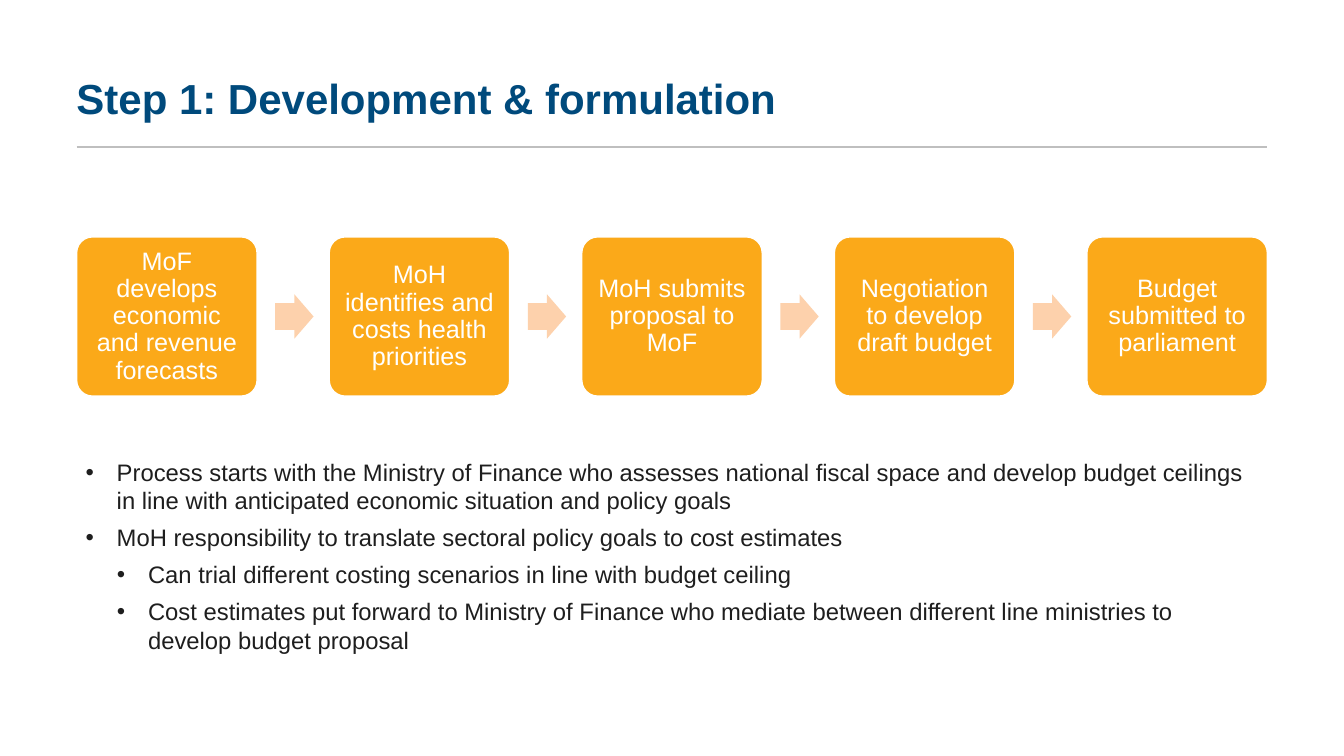
from dataclasses import dataclass

from lxml.etree import SubElement
from pptx import Presentation
from pptx.dml.color import RGBColor
from pptx.enum.shapes import MSO_CONNECTOR as Connector, MSO_SHAPE as Preset
from pptx.enum.text import MSO_ANCHOR as Anchor, PP_ALIGN as Align
from pptx.oxml.ns import qn
from pptx.util import Inches, Pt


@dataclass(frozen=True)
class Theme:
    """Colours, font and type sizes of the slide."""
    font: str = "Arial"
    title: RGBColor = RGBColor(0x00, 0x4A, 0x7C)
    body: RGBColor = RGBColor(0x1E, 0x1E, 0x1E)
    rule: RGBColor = RGBColor(0xBF, 0xBF, 0xBF)
    card: RGBColor = RGBColor(0xFB, 0xA9, 0x19)
    arrow: RGBColor = RGBColor(0xFD, 0xD1, 0xAC)
    white: RGBColor = RGBColor(0xFF, 0xFF, 0xFF)
    title_size: int = 30
    card_size: int = 18
    body_size: int = 17


THEME = Theme()

STEPS = [
    "MoF develops economic and revenue forecasts",
    "MoH identifies and costs health priorities",
    "MoH submits proposal to MoF",
    "Negotiation to develop draft budget",
    "Budget submitted to parliament",
]

BULLETS = [
    (0, "Process starts with the Ministry of Finance who assesses national fiscal space "
        "and develop budget ceilings in line with anticipated economic situation and policy goals"),
    (0, "MoH responsibility to translate sectoral policy goals to cost estimates"),
    (1, "Can trial different costing scenarios in line with budget ceiling"),
    (1, "Cost estimates put forward to Ministry of Finance who mediate between different "
        "line ministries to develop budget proposal"),
]


def add_run(paragraph, text, size, color, bold=False):
    """Add one styled run to a paragraph."""
    run = paragraph.add_run()
    run.text = text
    run.font.name = THEME.font
    run.font.size = Pt(size)
    run.font.bold = bold
    run.font.color.rgb = color


def add_text_frame(slide, left, top, width, height):
    """Add a wrapping text box and return its text frame."""
    box = slide.shapes.add_textbox(Inches(left), Inches(top), Inches(width), Inches(height))
    box.text_frame.word_wrap = True
    return box.text_frame


def add_filled_shape(slide, preset, left, top, width, height, color):
    """Add a flat preset shape without an outline."""
    shape = slide.shapes.add_shape(
        preset, Inches(left), Inches(top), Inches(width), Inches(height))
    shape.shadow.inherit = False
    shape.fill.solid()
    shape.fill.fore_color.rgb = color
    shape.line.fill.background()
    return shape


def add_heading(slide, left, top, width, height, text):
    """Place the title with the rule beneath it."""
    frame = add_text_frame(slide, left, top, width, height)
    frame.vertical_anchor = Anchor.BOTTOM
    paragraph = frame.paragraphs[0]
    paragraph.line_spacing = 0.9
    add_run(paragraph, text, THEME.title_size, THEME.title, bold=True)
    rule_y = Inches(top + height + 0.18)
    rule = slide.shapes.add_connector(
        Connector.STRAIGHT, Inches(left + 0.1), rule_y, Inches(left + width - 0.01), rule_y)
    rule.line.color.rgb = THEME.rule
    rule.line.width = Pt(1.5)
    SubElement(rule._element.spPr, qn("a:effectLst"))


def add_card(slide, left, top, width, height, text):
    """Place one rounded step card with centred text."""
    card = add_filled_shape(
        slide, Preset.ROUNDED_RECTANGLE, left, top, width, height, THEME.card)
    card.adjustments[0] = 0.1
    card.line.color.rgb = THEME.white
    card.line.width = Pt(1)
    frame = card.text_frame
    frame.word_wrap = True
    frame.vertical_anchor = Anchor.MIDDLE
    frame.margin_left = frame.margin_right = Inches(0.11)
    frame.margin_top = frame.margin_bottom = Inches(0.11)
    paragraph = frame.paragraphs[0]
    paragraph.alignment = Align.CENTER
    paragraph.line_spacing = 0.9
    add_run(paragraph, text, THEME.card_size, THEME.white)


def add_process(slide, left, top, width, height, steps):
    """Spread the step cards evenly and point an arrow from each to the next."""
    card_width, arrow_width, arrow_height = 1.79, 0.38, 0.44
    pitch = (width - card_width) / (len(steps) - 1)
    for index, text in enumerate(steps):
        card_left = left + index * pitch
        add_card(slide, card_left, top, card_width, height, text)
        if index < len(steps) - 1:
            arrow = add_filled_shape(
                slide, Preset.RIGHT_ARROW, card_left + card_width + 0.18,
                top + (height - arrow_height) / 2, arrow_width, arrow_height, THEME.arrow)
            arrow.adjustments[0] = 0.6
            arrow.adjustments[1] = 0.5


def add_bullets(slide, left, top, width, height, bullets):
    """Place the two-level bullet list."""
    indent = 0.31
    frame = add_text_frame(slide, left, top, width, height)
    for index, (level, text) in enumerate(bullets):
        paragraph = frame.add_paragraph() if index else frame.paragraphs[0]
        paragraph.level = level
        paragraph.space_before = Pt(6)
        properties = paragraph._p.get_or_add_pPr()
        properties.set("marL", str(Inches(indent * (level + 1))))
        properties.set("indent", str(-Inches(indent)))
        SubElement(properties, qn("a:buFont")).set("typeface", THEME.font)
        SubElement(properties, qn("a:buChar")).set("char", "•")
        add_run(paragraph, text, THEME.body_size, THEME.body)


def main():
    """Build the slide and save it."""
    presentation = Presentation()
    presentation.slide_width = Inches(13.33)
    presentation.slide_height = Inches(7.5)
    slide = presentation.slides.add_slide(presentation.slide_layouts[6])
    add_heading(slide, 0.66, 0.46, 11.92, 0.82, "Step 1: Development & formulation")
    add_process(slide, 0.76, 2.35, 11.81, 1.58, STEPS)
    add_bullets(slide, 0.75, 4.49, 11.83, 2.24, BULLETS)
    presentation.save("out.pptx")


if __name__ == "__main__":
    main()
